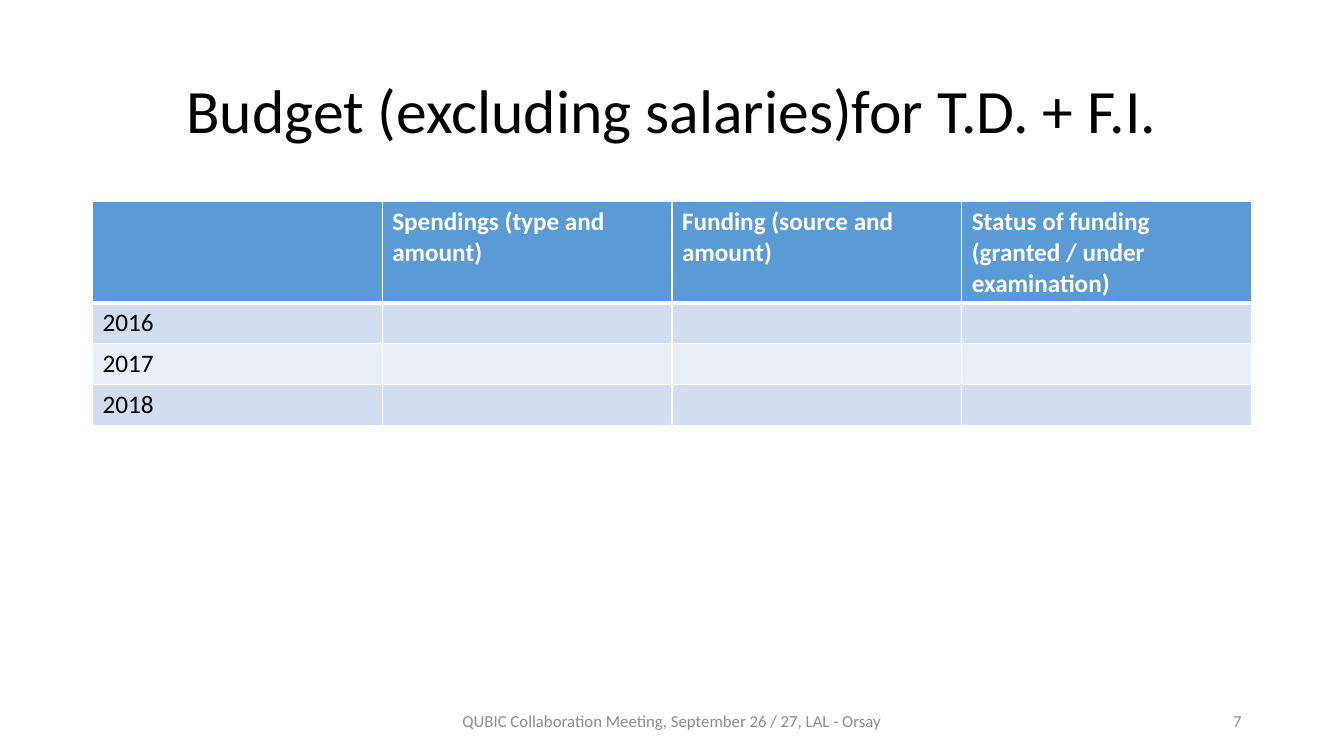
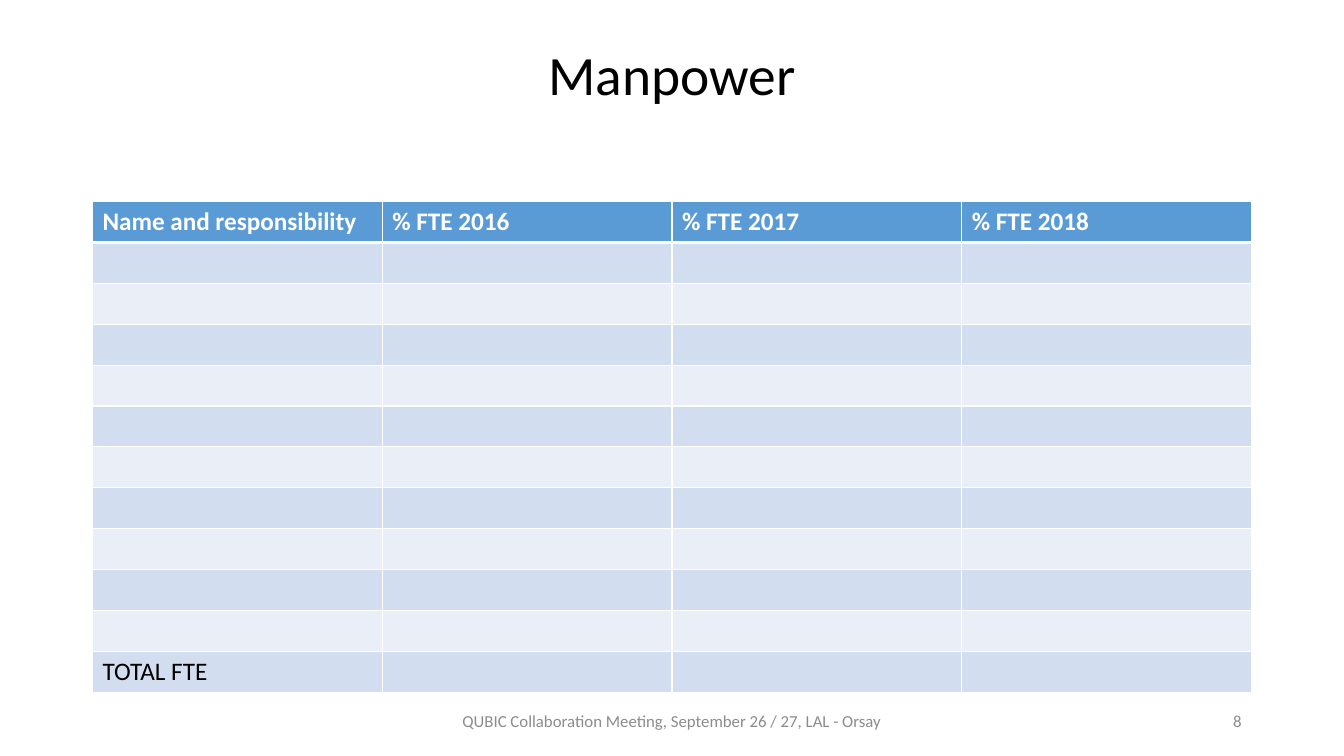
from dataclasses import dataclass

from lxml import etree
from pptx import Presentation
from pptx.dml.color import RGBColor
from pptx.enum.text import MSO_ANCHOR, PP_ALIGN
from pptx.oxml.ns import qn
from pptx.util import Cm, Pt

LEFT, CENTER, RIGHT = PP_ALIGN.LEFT, PP_ALIGN.CENTER, PP_ALIGN.RIGHT
MIDDLE = MSO_ANCHOR.MIDDLE


@dataclass(frozen=True)
class Theme:
    font: str = "Calibri"
    ink: str = "000000"
    white: str = "FFFFFF"
    muted: str = "8C8C8C"
    header: str = "5B9BD5"
    bands: tuple[str, str] = ("D2DEEF", "EAEFF7")
    body_size: float = 18
    footer_size: float = 12
    rule: float = 1
    header_rule: float = 3


@dataclass(frozen=True)
class TableSlide:
    number: int
    title: str
    title_size: float
    title_height: float
    headers: tuple[str, ...]
    labels: tuple[str, ...]
    header_height: float


THEME = Theme()
MARGIN, CONTENT_W = 2.33, 29.21
TABLE_TOP, ROW_H = 5.08, 1.03
FOOTER_TOP, FOOTER_H = 17.65, 1.01
FOOTER = "QUBIC Collaboration Meeting, September 26 / 27, LAL - Orsay"

SLIDES = (
    TableSlide(7, "Budget (excluding salaries)for T.D. + F.I.", 44, 3.68,
               ("", "Spendings (type and amount)", "Funding (source and amount)",
                "Status of funding (granted / under examination)"),
               ("2016", "2017", "2018"), 2.55),
    TableSlide(8, "Manpower", 39.6, 1.91,
               ("Name and responsibility", "% FTE 2016", "% FTE 2017", "% FTE 2018"),
               ("",) * 10 + ("TOTAL FTE",), ROW_H),
)


def write(tf, text: str, *, size: float, color: str = THEME.ink, bold: bool = False,
          align=LEFT, spacing: float = 1.0) -> None:
    """Write one formatted paragraph into a text frame."""
    p = tf.paragraphs[0]
    p.alignment, p.line_spacing = align, spacing
    p.font.size = Pt(size)
    if not text:
        return
    r = p.add_run()
    r.text = text
    r.font.name, r.font.size, r.font.bold = THEME.font, Pt(size), bold
    r.font.color.rgb = RGBColor.from_string(color)


def add_text(s, text: str, left: float, top: float, width: float, height: float,
             **style) -> None:
    tf = s.shapes.add_textbox(Cm(left), Cm(top), Cm(width), Cm(height)).text_frame
    tf.word_wrap, tf.vertical_anchor = True, MIDDLE
    write(tf, text, **style)


def set_borders(cell, top: float, bottom: float) -> None:
    """Draw white cell borders; the line elements precede the fill."""
    tc_pr = cell._tc.get_or_add_tcPr()
    sides = (("L", THEME.rule), ("R", THEME.rule), ("T", top), ("B", bottom))
    for i, (side, width) in enumerate(sides):
        ln = etree.Element(qn(f"a:ln{side}"), w=str(Pt(width)))
        fill = etree.SubElement(ln, qn("a:solidFill"))
        etree.SubElement(fill, qn("a:srgbClr"), val=THEME.white)
        tc_pr.insert(i, ln)


def add_grid(s, spec: TableSlide) -> None:
    cols = len(spec.headers)
    rows = [spec.headers] + [(label,) + ("",) * (cols - 1) for label in spec.labels]
    height = spec.header_height + ROW_H * len(spec.labels)
    table = s.shapes.add_table(len(rows), cols, Cm(MARGIN), Cm(TABLE_TOP),
                               Cm(CONTENT_W), Cm(height)).table
    for col in table.columns:
        col.width = Cm(CONTENT_W / cols)
    for i, texts in enumerate(rows):
        head = i == 0
        table.rows[i].height = Cm(spec.header_height if head else ROW_H)
        fill = THEME.header if head else THEME.bands[(i - 1) % 2]
        for j, text in enumerate(texts):
            cell = table.cell(i, j)
            cell.fill.solid()
            cell.fill.fore_color.rgb = RGBColor.from_string(fill)
            set_borders(cell, top=THEME.header_rule if i == 1 else THEME.rule,
                        bottom=THEME.header_rule if head else THEME.rule)
            write(cell.text_frame, text, size=THEME.body_size, bold=head,
                  color=THEME.white if head else THEME.ink)


def add_footer(s, number: int) -> None:
    style = {"size": THEME.footer_size, "color": THEME.muted}
    add_text(s, FOOTER, 11.22, FOOTER_TOP, 11.43, FOOTER_H, align=CENTER, **style)
    add_text(s, str(number), 23.92, FOOTER_TOP, 7.62, FOOTER_H, align=RIGHT, **style)


def add_table_slide(prs, spec: TableSlide) -> None:
    s = prs.slides.add_slide(prs.slide_layouts[6])
    # Title
    add_text(s, spec.title, MARGIN, 1.01, CONTENT_W, spec.title_height,
             size=spec.title_size, align=CENTER, spacing=0.9)
    # Table and footer
    add_grid(s, spec)
    add_footer(s, spec.number)


def main() -> None:
    prs = Presentation()
    prs.slide_width, prs.slide_height = Cm(33.87), Cm(19.05)
    for spec in SLIDES:
        add_table_slide(prs, spec)
    prs.save("out.pptx")


if __name__ == "__main__":
    main()
